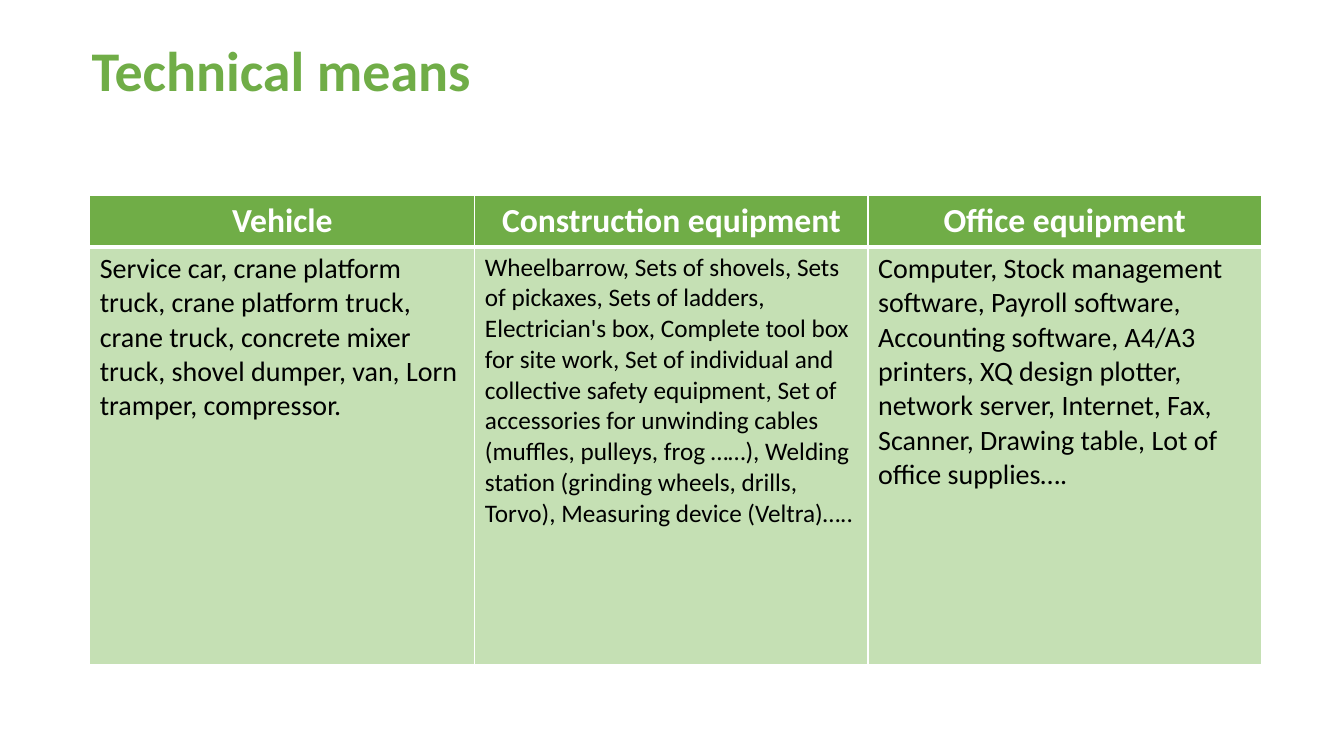
import pptx
import pptx.dml.color
import pptx.enum.text
import pptx.oxml
import pptx.oxml.ns
import pptx.util
from pptx.util import Inches

COLORS = {"green": "70AD47", "pale": "C5E0B4", "white": "FFFFFF", "black": "000000"}
FONT = "Calibri"
COLUMNS = [
    ("Vehicle", 3.82, 20,
     "Service car, crane platform truck, crane platform truck, crane truck, "
     "concrete mixer truck, shovel dumper, van, Lorn tramper, compressor."),
    ("Construction equipment", 3.9, 18,
     "Wheelbarrow, Sets of shovels, Sets of pickaxes, Sets of ladders, "
     "Electrician's box, Complete tool box for site work, Set of individual and "
     "collective safety equipment, Set of accessories for unwinding cables "
     "(muffles, pulleys, frog ……), Welding station (grinding wheels, drills, "
     "Torvo), Measuring device (Veltra)….."),
    ("Office equipment", 3.9, 20,
     "Computer, Stock management software, Payroll software, Accounting software, "
     "A4/A3 printers, XQ design plotter, network server, Internet, Fax, Scanner, "
     "Drawing table, Lot of office supplies…."),
]
ROW_HEIGHTS = (0.51, 4.14)


def rgb(name):
    """Return the named colour."""
    return pptx.dml.color.RGBColor.from_string(COLORS[name])


def format_paragraph(paragraph, size, color, bold):
    """Set the font of a whole paragraph."""
    font = paragraph.font
    font.name, font.size, font.bold = FONT, pptx.util.Pt(size), bold
    font.color.rgb = rgb(color)


def set_borders(cell, top, bottom):
    """Give a cell white borders, with its own top and bottom widths in points."""
    properties = cell._tc.get_or_add_tcPr()
    widths = {"lnL": 1, "lnR": 1, "lnT": top, "lnB": bottom}
    for position, (tag, width) in enumerate(widths.items()):
        border = pptx.oxml.parse_xml(
            f'<a:{tag} {pptx.oxml.ns.nsdecls("a")} w="{pptx.util.Pt(width)}">'
            f'<a:solidFill><a:srgbClr val="{COLORS["white"]}"/></a:solidFill></a:{tag}>')
        properties.insert(position, border)


def fill_cell(cell, text, size, color, bold, fill, borders):
    """Write and format one table cell, and return its paragraph."""
    cell.text = text
    cell.fill.solid()
    cell.fill.fore_color.rgb = rgb(fill)
    set_borders(cell, *borders)
    paragraph = cell.text_frame.paragraphs[0]
    format_paragraph(paragraph, size, color, bold)
    return paragraph


def place_title(slide, text, left, top, width, height):
    """Place the slide title in the given box."""
    title = slide.shapes.title
    title.left, title.top = Inches(left), Inches(top)
    title.width, title.height = Inches(width), Inches(height)
    title.text_frame.text = text
    title.text_frame.vertical_anchor = pptx.enum.text.MSO_ANCHOR.MIDDLE
    paragraph = title.text_frame.paragraphs[0]
    paragraph.alignment = pptx.enum.text.PP_ALIGN.LEFT
    paragraph.line_spacing = 0.9
    format_paragraph(paragraph, 40, "green", True)


def place_equipment_table(slide, left, top, width, height):
    """Place the table of technical means in the given box."""
    table = slide.shapes.add_table(
        len(ROW_HEIGHTS), len(COLUMNS),
        Inches(left), Inches(top), Inches(width), Inches(height)).table
    for row, row_height in zip(table.rows, ROW_HEIGHTS):
        row.height = Inches(row_height)
    for index, (heading, column_width, size, items) in enumerate(COLUMNS):
        table.columns[index].width = Inches(column_width)
        header = fill_cell(table.cell(0, index), heading, 24, "white", True, "green", (1, 3))
        header.alignment = pptx.enum.text.PP_ALIGN.CENTER
        fill_cell(table.cell(1, index), items, size, "black", False, "pale", (3, 1))


def main():
    """Build and save the presentation."""
    presentation = pptx.Presentation()
    presentation.slide_width, presentation.slide_height = Inches(13.33), Inches(7.5)
    slide = presentation.slides.add_slide(presentation.slide_layouts[5])
    place_title(slide, "Technical means", 0.81, 0.2, 11.5, 1.05)
    place_equipment_table(slide, 0.89, 1.94, 11.62, sum(ROW_HEIGHTS))
    presentation.save("out.pptx")


if __name__ == "__main__":
    main()
